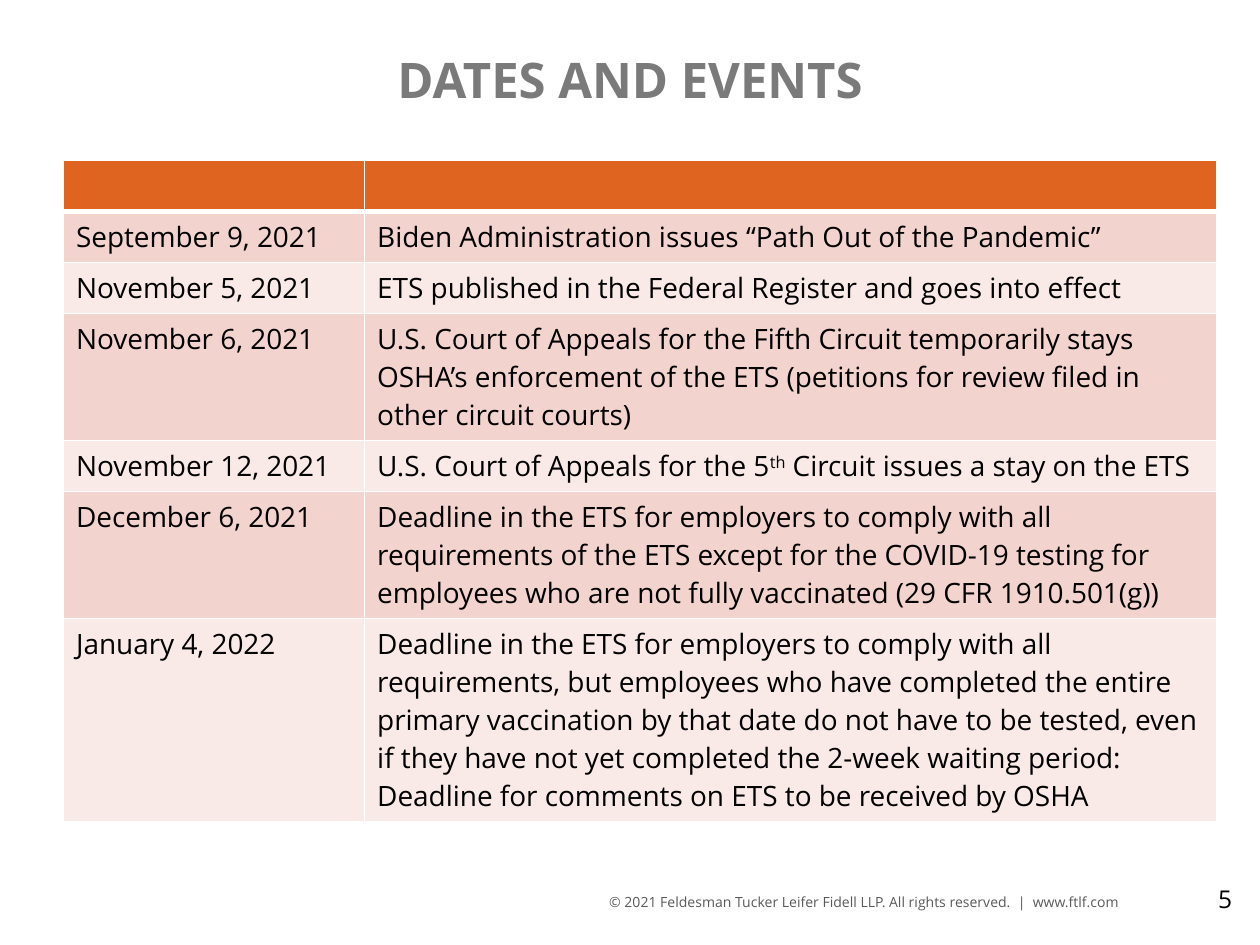
import pptx
import pptx.dml.color
import pptx.enum.text
import pptx.oxml
import pptx.oxml.ns
import pptx.util

Cm = pptx.util.Cm
Pt = pptx.util.Pt
ALIGN = pptx.enum.text.PP_ALIGN
ANCHOR = pptx.enum.text.MSO_ANCHOR

FONT = "Open Sans"
HEADER_FILL = "DF6420"
BAND_FILLS = ["F3D3CD", "F9EAE8"]
COL_WIDTHS = [6.07, 17.17]
ROW_HEIGHTS = [1.03, 1.03, 1.03, 2.56, 1.03, 2.56, 4.09]
EVENTS = [
    ("September 9, 2021", ["Biden Administration issues “Path Out of the Pandemic”"]),
    ("November 5, 2021", ["ETS published in the Federal Register and goes into effect"]),
    ("November 6, 2021", [
        "U.S. Court of Appeals for the Fifth Circuit temporarily stays OSHA’s "
        "enforcement of the ETS (petitions for review filed in other circuit courts)"]),
    ("November 12, 2021", [
        "U.S. Court of Appeals for the 5", ("th", 30),
        " Circuit issues a stay on the ETS"]),
    ("December 6, 2021", [
        "Deadline in the ETS for employers to comply with all requirements of the ETS "
        "except for the COVID-19 testing for employees who are not fully vaccinated "
        "(29 CFR 1910.501(g))"]),
    ("January 4, 2022", [
        "Deadline in the ETS for employers to comply with all requirements, but "
        "employees who have completed the entire primary vaccination by that date do "
        "not have to be tested, even if they have not yet completed the 2-week waiting "
        "period: Deadline for comments on ETS to be received by OSHA"]),
]


def rgb(color):
    return pptx.dml.color.RGBColor.from_string(color)


def add_run(p, text, size, color, bold=False, raised=0):
    r = p.add_run()
    r.text = text
    r.font.name = FONT
    r.font.size = Pt(size)
    r.font.bold = bold
    r.font.color.rgb = rgb(color)
    if raised:
        r.font._element.set("baseline", str(raised * 1000))


def add_text(s, box, text, size, color, align, anchor=ANCHOR.TOP, bold=False):
    sp = s.shapes.add_textbox(*[Cm(v) for v in box])
    tf = sp.text_frame
    tf.word_wrap = True
    tf.vertical_anchor = anchor
    p = tf.paragraphs[0]
    p.alignment = align
    add_run(p, text, size, color, bold)


def set_borders(cell, widths):
    tcPr = cell._tc.get_or_add_tcPr()
    for side, width in zip("LRTB", widths):
        tcPr.append(pptx.oxml.parse_xml(
            f'<a:ln{side} {pptx.oxml.ns.nsdecls("a")} w="{Pt(width)}">'
            f'<a:solidFill><a:srgbClr val="FFFFFF"/></a:solidFill></a:ln{side}>'))


def style_cell(cell, color, widths):
    set_borders(cell, widths)
    cell.fill.solid()
    cell.fill.fore_color.rgb = rgb(color)


def fill_cell(cell, parts):
    p = cell.text_frame.paragraphs[0]
    for part in parts:
        text, raised = (part, 0) if isinstance(part, str) else part
        add_run(p, text, 16, "000000", raised=raised)


def add_events_table(s):
    table = s.shapes.add_table(
        len(ROW_HEIGHTS), len(COL_WIDTHS), Cm(1.28), Cm(3.23),
        Cm(sum(COL_WIDTHS)), Cm(sum(ROW_HEIGHTS))).table
    for col, width in zip(table.columns, COL_WIDTHS):
        col.width = Cm(width)
    for row, height in zip(table.rows, ROW_HEIGHTS):
        row.height = Cm(height)
    for cell in table.rows[0].cells:
        style_cell(cell, HEADER_FILL, (1, 1, 1, 3))
    for i, (date, event) in enumerate(EVENTS):
        top = 3 if i == 0 else 1
        for cell, parts in zip(table.rows[i + 1].cells, ([date], event)):
            style_cell(cell, BAND_FILLS[i % 2], (1, 1, top, 1))
            fill_cell(cell, parts)


def main():
    prs = pptx.Presentation()
    prs.slide_width = Cm(25.4)
    prs.slide_height = Cm(19.05)
    s = prs.slides.add_slide(prs.slide_layouts[6])
    add_text(s, (1.27, 0.43, 22.86, 2.31), "DATES AND EVENTS", 28, "7A7A7A",
             ALIGN.CENTER, ANCHOR.MIDDLE, True)
    add_events_table(s)
    add_text(s, (11.18, 17.88, 12.5, 0.71),
             "© 2021 Feldesman Tucker Leifer Fidell LLP. All rights reserved.  |  www.ftlf.com",
             8, "595959", ALIGN.CENTER)
    add_text(s, (23.62, 17.7, 1.47, 1.02), "5", 14, "000000", ALIGN.RIGHT)
    prs.save("out.pptx")


if __name__ == "__main__":
    main()
